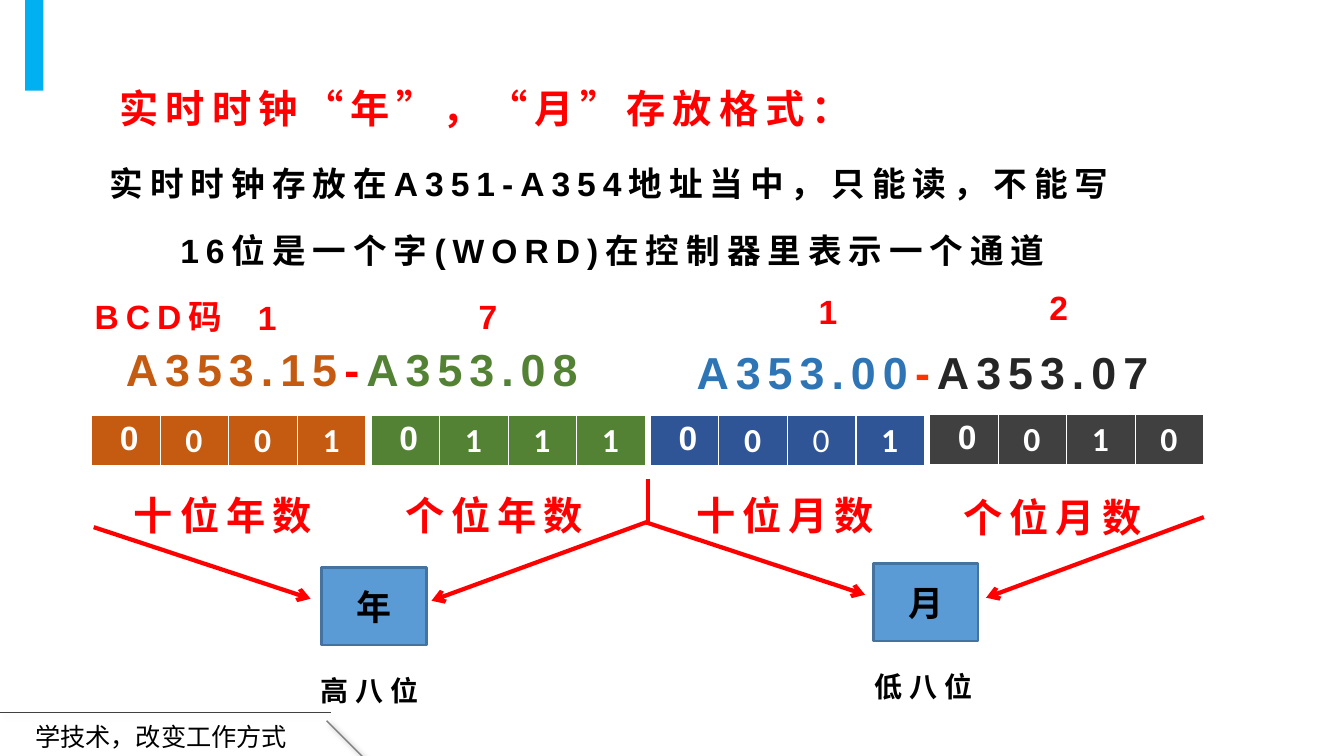
from lxml import etree
from pptx import Presentation
from pptx.dml.color import RGBColor
from pptx.enum.shapes import MSO_CONNECTOR, MSO_SHAPE
from pptx.enum.text import MSO_ANCHOR, MSO_AUTO_SIZE, PP_ALIGN
from pptx.oxml.ns import qn
from pptx.util import Inches, Pt

STRAIGHT = MSO_CONNECTOR.STRAIGHT
RECTANGLE = MSO_SHAPE.RECTANGLE
CENTER = PP_ALIGN.CENTER
MIDDLE, TOP = MSO_ANCHOR.MIDDLE, MSO_ANCHOR.TOP
GROW = MSO_AUTO_SIZE.SHAPE_TO_FIT_TEXT
CHINESE_FONT = "Noto Sans CJK SC"
RED, BLACK, WHITE = "FF0000", "000000", "FFFFFF"
ORANGE, GREEN = "C55A11", "548235"

# Content: places are left, top, width, height in inches
FOOTER = ("学技术，改变工作方式", (0.25, 7.11, 12.16, 0.4))
TITLE = ("实时时钟“年”，“月”存放格式：", (1.09, 0.79, 7.61, 0.57))
STATEMENTS = [
    ("实时时钟存放在A351-A354地址当中，只能读，不能写", (0.99, 1.37, 10.59, 0.63), 24),
    ("16位是一个字(WORD)在控制器里表示一个通道", (1.69, 2.03, 9.3, 0.71), 24),
    ("高八位", (3.08, 6.47, 1.29, 0.61), 20),
    ("低八位", (8.57, 6.43, 1.29, 0.61), 20),
]
BCD_LABEL = ("BCD码", (0.84, 2.89, 1.55, 0.5))
BCD_DIGITS = [("1", 2.46, 2.9), ("7", 4.65, 2.89), ("1", 8.02, 2.84), ("2", 10.31, 2.8)]
ADDRESSES = [
    ([("A353.15", ORANGE), ("-", RED), ("A353.08", GREEN)], (1.15, 3.34, 4.79, 0.64)),
    ([("A353.00", "2E75B6"), ("-", "FF3300"), ("A353.07", "262626")],
     (6.81, 3.37, 4.79, 0.64)),
]
# Bits, fill, top, index of the one bit that is not bold
NIBBLES = [
    ("0001", ORANGE, 4.12, None),
    ("0111", GREEN, 4.12, None),
    ("0001", "2F5597", 4.12, 2),
    ("0010", "404040", 4.11, None),
]
NIBBLE_LEFT, NIBBLE_STEP = 0.91, 2.77
BIT_WIDTH, BIT_HEIGHT = 0.68, 0.48
NIBBLE_NAMES = [("十位年数", 1.23, 4.83), ("个位年数", 3.92, 4.83),
                ("十位月数", 6.81, 4.83), ("个位月数", 9.46, 4.84)]
RESULTS = [("年", 3.19, 5.63), ("月", 8.66, 5.59)]
ARROWS = [
    ((0.93, 5.23), (3.08, 5.94)),
    ((6.44, 5.17), (4.28, 5.96)),
    ((6.43, 5.19), (8.58, 5.9)),
    ((11.94, 5.13), (9.78, 5.93)),
]
DIVIDER = ((6.43, 4.75), (6.43, 5.21))
FOOTER_LINES = [((0, 7.07), (3.28, 7.07), "404040", 0.25),
                ((3.24, 7.15), (3.6, 7.51), "808080", 1)]


def color(value):
    return RGBColor.from_string(value)


def write(frame, spans, size=24, font="Arial", hue=BLACK, bold=True,
          tracking=0, spacing=None, align=None):
    """Fill a text frame with one paragraph; spans is text or (text, colour) pairs."""
    para = frame.paragraphs[0]
    if spacing:
        para.line_spacing = spacing
    if align is not None:
        para.alignment = align
    for text, span_hue in [(spans, hue)] if isinstance(spans, str) else spans:
        span = para.add_run()
        span.text = text
        span.font.size, span.font.bold, span.font.name = Pt(size), bold, font
        span.font.color.rgb = color(span_hue)
        properties = span.font._element
        if tracking:
            properties.set("spc", str(tracking * 100))
        latin = properties.find(qn("a:latin"))
        east_asian = etree.Element(qn("a:ea"), typeface=CHINESE_FONT)
        latin.addnext(east_asian)


def add_text(page, spans, place, wrap=False, tracking=5, **style):
    box = page.shapes.add_textbox(*map(Inches, place))
    box.text_frame.word_wrap = wrap
    box.text_frame.auto_size = GROW
    write(box.text_frame, spans, tracking=tracking, **style)


def add_rectangle(page, place, fill, outline=None):
    shape = page.shapes.add_shape(RECTANGLE, *map(Inches, place))
    shape.shadow.inherit = False
    shape.fill.solid()
    shape.fill.fore_color.rgb = color(fill)
    if outline:
        shape.line.color.rgb = color(outline)
        shape.line.width = Pt(2)
    else:
        shape.line.fill.background()
    return shape


def add_line(page, start, end, hue=RED, width=3, arrow=False, shadow=False):
    line = page.shapes.add_connector(STRAIGHT, *map(Inches, start + end))
    line.line.color.rgb = color(hue)
    line.line.width = Pt(width)
    if arrow:
        etree.SubElement(line.line._get_or_add_ln(), qn("a:tailEnd"), type="arrow")
    effects = etree.SubElement(line._element.spPr, qn("a:effectLst"))
    if shadow:
        outer = etree.SubElement(effects, qn("a:outerShdw"), blurRad=str(Pt(4)),
                                 dist=str(Pt(3)), dir="2700000")
        shade = etree.SubElement(outer, qn("a:srgbClr"), val=BLACK)
        etree.SubElement(shade, qn("a:alpha"), val="40000")


def add_nibble(page, left, top, bits, fill, light_bit):
    count = len(bits)
    table = page.shapes.add_table(1, count, Inches(left), Inches(top),
                                  Inches(count * BIT_WIDTH), Inches(BIT_HEIGHT)).table
    table.horz_banding = False
    for index, bit in enumerate(bits):
        table.columns[index].width = Inches(BIT_WIDTH)
        cell = table.cell(0, index)
        cell.fill.solid()
        cell.fill.fore_color.rgb = color(fill)
        cell.vertical_anchor = TOP
        cell.margin_left = Inches(0.25 if index else 0.28)
        write(cell.text_frame, bit, hue=WHITE, bold=index != light_bit,
              font="Calibri" if index else "Arial")


def main():
    deck = Presentation()
    deck.slide_width, deck.slide_height = Inches(13.33), Inches(7.5)
    page = deck.slides.add_slide(deck.slide_layouts[6])

    # Page frame
    for start, end, hue, width in FOOTER_LINES:
        add_line(page, start, end, hue, width, shadow=True)
    add_text(page, *FOOTER, wrap=True, tracking=0, size=18, font=CHINESE_FONT, bold=False)
    add_rectangle(page, (0.25, 0, 0.18, 0.9), "00B0F0")

    # Title and statements
    add_text(page, *TITLE, size=28, hue=RED)
    for text, place, size in STATEMENTS:
        add_text(page, text, place, wrap=True, size=size, spacing=1.5)

    # BCD digits and bit addresses
    add_text(page, *BCD_LABEL, hue=RED)
    for digit, left, top in BCD_DIGITS:
        add_text(page, digit, (left, top, 0.46, 0.5), hue=RED)
    for spans, place in ADDRESSES:
        add_text(page, spans, place, size=32)

    # Four nibbles and their names
    for index, (bits, fill, top, light_bit) in enumerate(NIBBLES):
        add_nibble(page, NIBBLE_LEFT + index * NIBBLE_STEP, top, bits, fill, light_bit)
    for name, left, top in NIBBLE_NAMES:
        add_text(page, name, (left, top, 2.05, 0.57), size=28, hue=RED)

    # Arrows to year and month
    for start, end in ARROWS:
        add_line(page, start, end, arrow=True)
    add_line(page, *DIVIDER)
    for name, left, top in RESULTS:
        shape = add_rectangle(page, (left, top, 1.04, 0.77), "5B9BD5", "43739E")
        shape.text_frame.vertical_anchor = MIDDLE
        write(shape.text_frame, name, size=25, font="Calibri", align=CENTER)

    deck.save("out.pptx")


if __name__ == "__main__":
    main()
